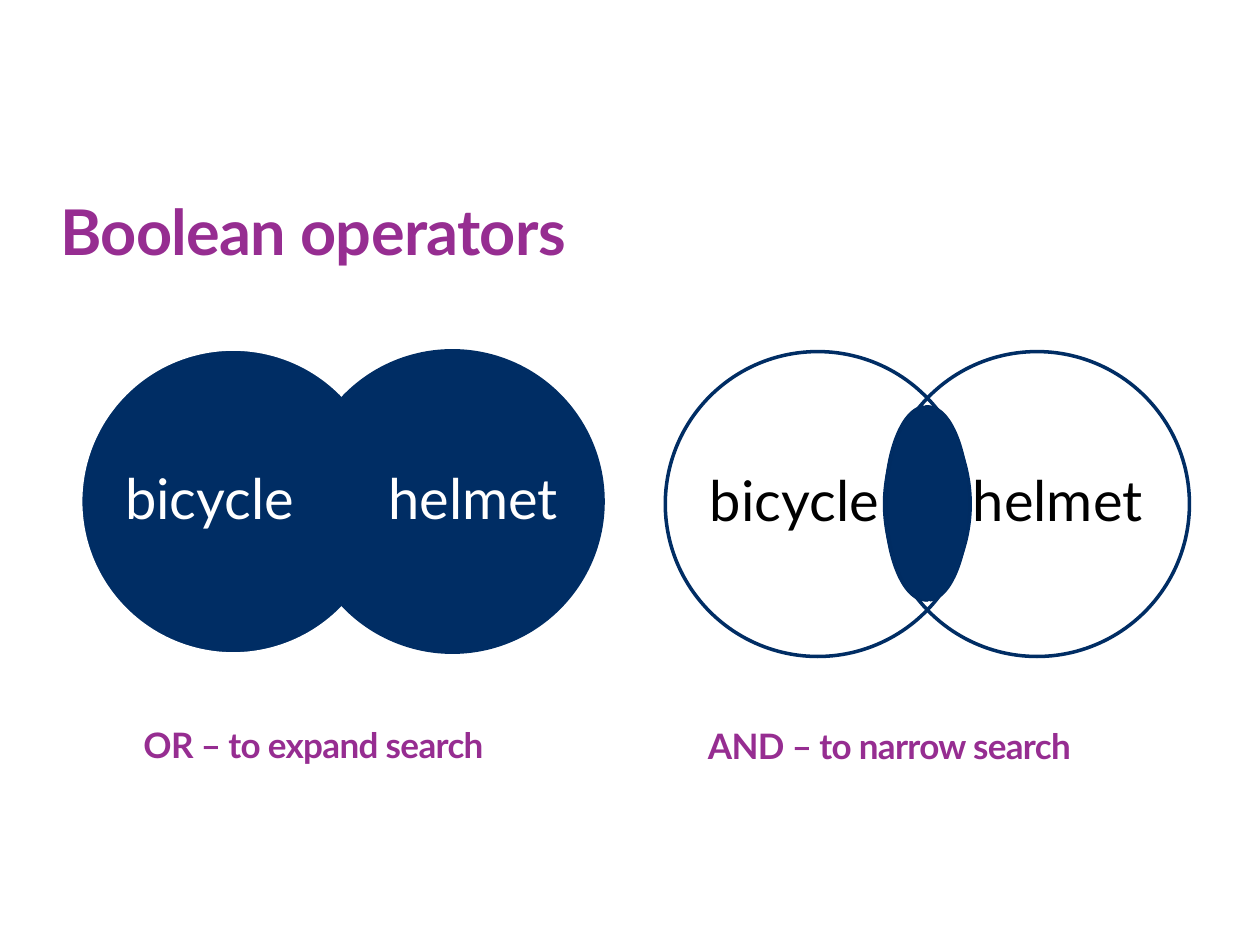
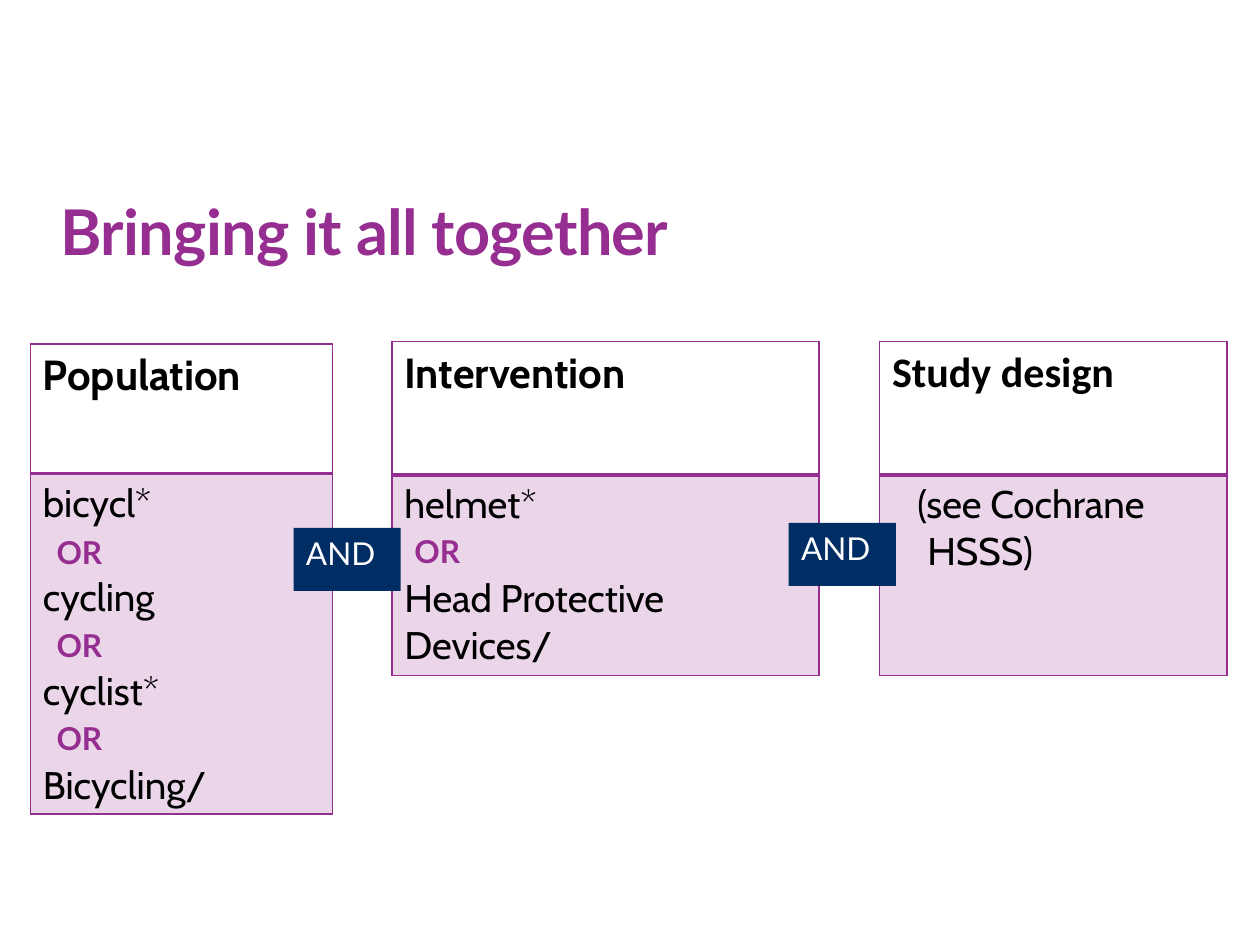
"""Builds two slides on Boolean operators in literature searching."""
from lxml import etree
from pptx import Presentation
from pptx.dml.color import RGBColor
from pptx.enum.shapes import MSO_SHAPE
from pptx.enum.text import MSO_ANCHOR, PP_ALIGN
from pptx.oxml.ns import qn
from pptx.util import Inches, Pt

PURPLE, NAVY, WHITE, BLACK = "962D91", "002D64", "FFFFFF", "000000"
ARC_OUTLINE = "002C62"

TERMS = ["bicycle", "helmet"]
CIRCLE_SIZE, CIRCLE_STEP = 2.42, 1.74
LABEL_OFFSETS = [0.33, 0.68]
VENNS = [
    {"left": 0.64, "top": 2.77, "fill": NAVY, "lines": [WHITE, None], "text": WHITE},
    {"left": 5.28, "top": 2.79, "fill": None, "lines": [NAVY, NAVY], "text": BLACK},
]
OVERLAP_ARCS = [(7.02, 0), (7.04, 180)]
CAPTIONS = [
    ("OR – to expand search", (1.04, 5.69, 3.58, 0.67)),
    ("AND – to narrow search", (5.52, 5.7, 4.01, 0.45)),
]

CONCEPTS = [
    {"heading": "Study design", "font": "Calibri", "at": (6.98, 2.71), "width": 2.76,
     "rows": (1.06, 1.59), "lines": ["(see Cochrane", "HSSS)"],
     "indents": [0.2, 0.28], "gap": 0},
    {"heading": "Intervention", "font": "Cabin", "at": (3.11, 2.71), "width": 3.39,
     "rows": (1.06, 1.59), "lines": ["helmet*", "Head Protective Devices/"],
     "indents": [0, 0], "gap": 27},
    {"heading": "Population", "font": "Cabin", "at": (0.24, 2.73), "width": 2.4,
     "rows": (1.03, 2.7), "lines": ["bicycl*", "cycling", "cyclist*", "Bicycling/"],
     "indents": [0, 0, 0, 0], "gap": 27},
]
AND_BOXES = [(2.33, 4.19), (6.26, 4.15)]
OR_LABELS = [(0.35, 4.18 + 0.74 * index) for index in range(3)] + [(3.19, 4.17)]


def color(value):
    return RGBColor.from_string(value)


def place(left, top, width, height):
    return [Inches(value) for value in (left, top, width, height)]


def style(paragraph, size, hex_color, font="Lato", bold=False, spacing=None):
    paragraph.font.name = font
    paragraph.font.size = Pt(size)
    paragraph.font.bold = bold
    paragraph.font.color.rgb = color(hex_color)
    if spacing is not None:
        for run in paragraph.runs:
            run.font._element.set("spc", str(spacing))


def add_text(shapes, text, box, size, hex_color, bold=False, spacing=None,
             anchor=MSO_ANCHOR.TOP, margins=True):
    frame = shapes.add_textbox(*place(*box)).text_frame
    frame.word_wrap = True
    frame.vertical_anchor = anchor
    if not margins:
        frame.margin_left = frame.margin_right = 0
        frame.margin_top = frame.margin_bottom = 0
    paragraph = frame.paragraphs[0]
    paragraph.text = text
    style(paragraph, size, hex_color, bold=bold, spacing=spacing)
    return paragraph


def add_shape(shapes, kind, box, fill=None, line=None, line_width=2):
    shape = shapes.add_shape(kind, *place(*box))
    shape.shadow.inherit = False
    if fill:
        shape.fill.solid()
        shape.fill.fore_color.rgb = color(fill)
    else:
        shape.fill.background()
    if line:
        shape.line.color.rgb = color(line)
        shape.line.width = Pt(line_width)
    else:
        shape.line.fill.background()
    return shape


def add_slide(presentation, title):
    slide = presentation.slides.add_slide(presentation.slide_layouts[6])
    add_text(slide.shapes, title, (0.48, 1.44, 6.69, 0.69), 36, PURPLE, bold=True,
             spacing=-40, anchor=MSO_ANCHOR.BOTTOM, margins=False)
    return slide


def add_venn(slide, venn):
    shapes = slide.shapes.add_group_shape().shapes
    for index, term in enumerate(TERMS):
        left = venn["left"] + CIRCLE_STEP * index
        add_shape(shapes, MSO_SHAPE.OVAL, (left, venn["top"], CIRCLE_SIZE, CIRCLE_SIZE),
                  venn["fill"], venn["lines"][index])
        label = (left + LABEL_OFFSETS[index], venn["top"] + 0.28, 1.39, 1.85)
        paragraph = add_text(shapes, term, label, 32, venn["text"],
                             anchor=MSO_ANCHOR.MIDDLE, margins=False)
        paragraph.alignment = PP_ALIGN.CENTER
        paragraph.line_spacing = 0.9


def set_borders(cell, top, bottom):
    properties = cell._tc.get_or_add_tcPr()
    for side, width in (("L", 1), ("R", 1), ("T", top), ("B", bottom)):
        line = etree.SubElement(properties, qn(f"a:ln{side}"), w=str(Pt(width)))
        fill = etree.SubElement(line, qn("a:solidFill"))
        etree.SubElement(fill, qn("a:srgbClr"), val=PURPLE)


def add_concept(slide, concept):
    box = (*concept["at"], concept["width"], sum(concept["rows"]))
    table = slide.shapes.add_table(2, 1, *place(*box)).table
    table.horz_banding = False
    for row, height in zip(table.rows, concept["rows"]):
        row.height = Inches(height)

    header, body = table.cell(0, 0), table.cell(1, 0)
    set_borders(header, 1, 2)
    header.fill.background()
    header.text = concept["heading"]
    style(header.text_frame.paragraphs[0], 24, BLACK, concept["font"], bold=True)

    set_borders(body, 2, 1)
    body.fill.solid()
    body.fill.fore_color.rgb = color(PURPLE)
    tint = body._tc.tcPr.find(qn("a:solidFill")).find(qn("a:srgbClr"))
    etree.SubElement(tint, qn("a:alpha"), val="20000")
    body.text = "\n".join(concept["lines"])
    for index, paragraph in enumerate(body.text_frame.paragraphs):
        indent = concept["indents"][index]
        if indent:
            paragraph._p.get_or_add_pPr().set("marL", str(Inches(indent)))
        if index and concept["gap"]:
            paragraph.space_before = Pt(concept["gap"])
        style(paragraph, 22, BLACK, "Cabin")


def build_operators(presentation):
    slide = add_slide(presentation, "Boolean operators")
    for venn in VENNS:
        add_venn(slide, venn)
    for left, rotation in OVERLAP_ARCS:
        arc = add_shape(slide.shapes, MSO_SHAPE.ARC, (left, 3.22, 0.65, 1.55),
                        NAVY, ARC_OUTLINE, 0.75)
        arc.adjustments[0] = 162
        arc.adjustments[1] = 161.29
        arc.rotation = rotation
    for caption, box in CAPTIONS:
        add_text(slide.shapes, caption, box, 20, PURPLE, bold=True, spacing=-40)


def build_summary(presentation):
    slide = add_slide(presentation, "Bringing it all together")
    for concept in CONCEPTS:
        add_concept(slide, concept)
    for left, top in AND_BOXES:
        shape = add_shape(slide.shapes, MSO_SHAPE.RECTANGLE, (left, top, 0.85, 0.5), NAVY)
        shape.text_frame.vertical_anchor = MSO_ANCHOR.TOP
        paragraph = shape.text_frame.paragraphs[0]
        paragraph.text = "AND"
        paragraph.alignment = PP_ALIGN.LEFT
        style(paragraph, 18, WHITE)
    for left, top in OR_LABELS:
        add_text(slide.shapes, "OR", (left, top, 0.61, 0.45), 18, PURPLE, bold=True)


def main():
    presentation = Presentation()
    presentation.slide_width = Inches(10)
    presentation.slide_height = Inches(7.5)
    build_operators(presentation)
    build_summary(presentation)
    presentation.save("out.pptx")


if __name__ == "__main__":
    main()
